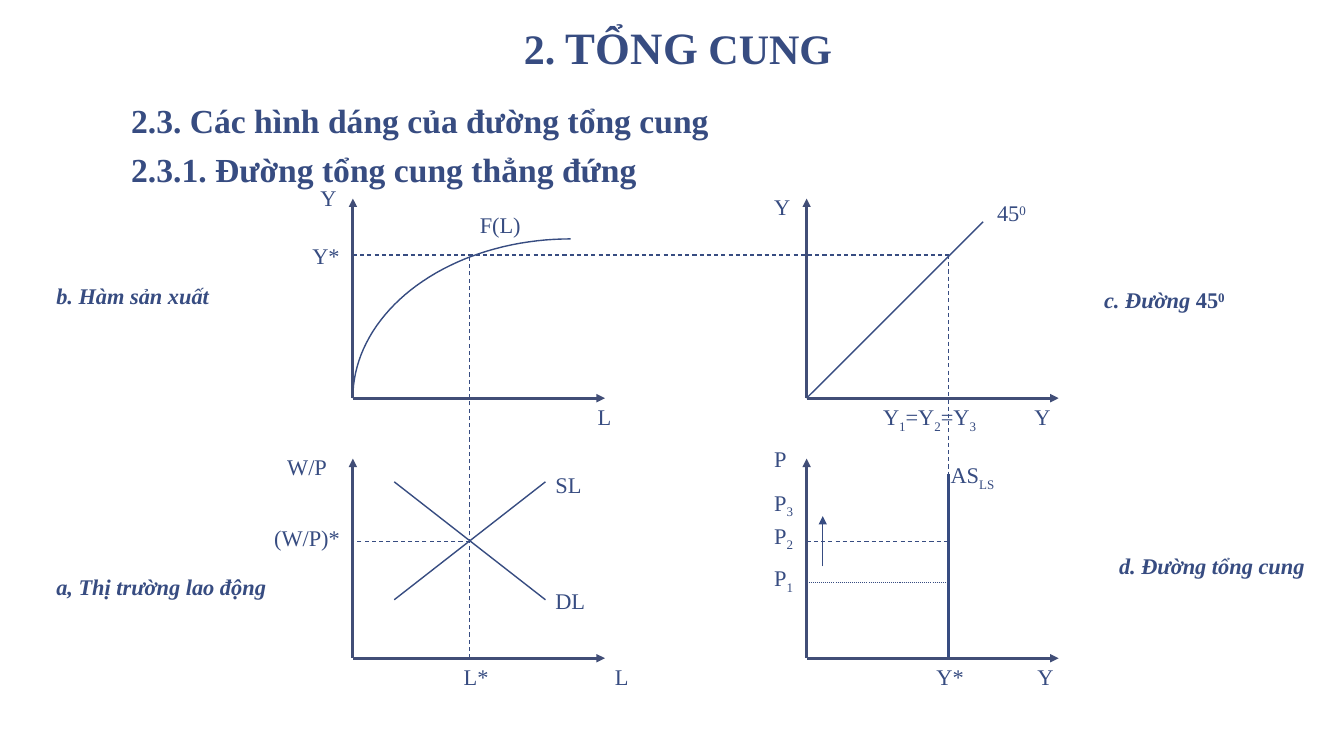
from math import cos, pi, sin

from lxml.etree import SubElement
from pptx import Presentation
from pptx.dml.color import RGBColor
from pptx.enum.dml import MSO_LINE
from pptx.enum.shapes import MSO_CONNECTOR
from pptx.enum.text import MSO_ANCHOR, MSO_AUTO_SIZE, PP_ALIGN
from pptx.oxml.ns import qn
from pptx.util import Inches, Pt

INK = "374C81"
AXIS = "414E77"
SUB, SUPER = -25, 30
LEFT_ORIGIN, RIGHT_ORIGIN = 3.5, 8
TOP_BASE, BOTTOM_BASE = 3.95, 6.53
OUTPUT_LEVEL, WAGE_LEVEL, LOW_PRICE = 2.53, 5.37, 5.78
LABOUR, OUTPUT = 4.66, 9.41
CAPTION = {"bold": True, "italic": True}


def colour(value):
    return RGBColor.from_string(value)


def set_values(target, values):
    for name, value in values.items():
        setattr(target, name, value)


def add_span(para, text, baseline=0, **values):
    span = para.add_run()
    span.text = text
    set_values(span.font, {"name": "Times New Roman", "size": Pt(16), **values})
    span.font.color.rgb = colour(INK)
    if baseline:
        span._r.get_or_add_rPr().set("baseline", str(baseline * 1000))


def add_text(page, left, top, width, height, paragraphs, frame={}, layout={}):
    box = page.shapes.add_textbox(*map(Inches, (left, top, width, height)))
    set_values(box.text_frame, {"word_wrap": True, **frame})
    for index, spans in enumerate(paragraphs):
        para = box.text_frame.paragraphs[0] if index == 0 else box.text_frame.add_paragraph()
        set_values(para, layout)
        if index:
            para.space_before = Pt(6)
        for text, values in spans:
            add_span(para, text, **values)


def add_label(page, left, top, width, text, baseline_texts=(), **values):
    spans = [(text, values)]
    spans += [(part, {**values, "baseline": shift}) for part, shift in baseline_texts]
    add_text(page, left, top, width, 0.37, [spans],
             {"auto_size": MSO_AUTO_SIZE.SHAPE_TO_FIT_TEXT})


def add_line(page, start, end, width=1, dash=None, arrow=False, ink=INK):
    line = page.shapes.add_connector(MSO_CONNECTOR.STRAIGHT, *map(Inches, (*start, *end)))
    set_values(line.line, {"width": Pt(width), "dash_style": dash})
    line.line.color.rgb = colour(ink)
    if arrow:
        SubElement(line.line._get_or_add_ln(), qn("a:tailEnd"), type="triangle")
    SubElement(line._element.spPr, qn("a:effectLst"))


def add_axes(page, left, base):
    for end in ((left, base - 1.98), (left + 2.5, base)):
        add_line(page, (left, base), end, 2, arrow=True, ink=AXIS)


def add_production_curve(page):
    right, width, height, steps = 5.66, 2.16, 1.58, 40
    points = [(Inches(right - width * cos(pi / 2 * step / steps)),
               Inches(TOP_BASE - height * sin(pi / 2 * step / steps)))
              for step in range(steps + 1)]
    builder = page.shapes.build_freeform(*points[0])
    builder.add_line_segments(points[1:], close=False)
    curve = builder.convert_to_shape()
    curve.shadow.inherit = False
    curve.fill.background()
    curve.line.width = Pt(1)
    curve.line.color.rgb = colour(INK)


def add_headings(page):
    insets = {"margin_left": Inches(0.13), "margin_right": Inches(0.13),
              "margin_top": Inches(0.07), "margin_bottom": Inches(0.07)}
    title = [("2. ", 30), ("TỔNG", 32), (" CUNG", 30)]
    add_text(page, 1.17, -0.2, 11.11, 1,
             [[(text, {"size": Pt(size), "bold": True}) for text, size in title]],
             {**insets, "vertical_anchor": MSO_ANCHOR.BOTTOM},
             {"alignment": PP_ALIGN.CENTER, "line_spacing": 0.85})
    headings = ["2.3. Các hình dáng của đường tổng cung", "2.3.1. Đường tổng cung thẳng đứng"]
    add_text(page, 1.17, 0.92, 11.11, 5.91,
             [[(text, {"size": Pt(24), "bold": True})] for text in headings], insets)
    add_text(page, 10.82, 2.79, 2.08, 0.58,
             [[("c. Đường ", CAPTION), ("45", {"bold": True}),
               ("0", {"bold": True, "baseline": SUPER})]],
             insets, {"line_spacing": 0.95})


def add_curves(page):
    add_line(page, (RIGHT_ORIGIN, TOP_BASE), (9.75, 2.2))
    add_line(page, (3.91, 4.78), (5.41, 5.95))
    add_line(page, (5.41, 4.78), (3.91, 5.95))
    add_production_curve(page)
    add_line(page, (OUTPUT, BOTTOM_BASE), (OUTPUT, 4.7), 2.25)
    add_line(page, (8.16, 5.62), (8.16, 5.12), 0.75, arrow=True)


def add_guides(page):
    guides = [
        ((LABOUR, BOTTOM_BASE), (LABOUR, OUTPUT_LEVEL)),
        ((OUTPUT, OUTPUT_LEVEL), (OUTPUT, BOTTOM_BASE)),
        ((LABOUR, WAGE_LEVEL), (LEFT_ORIGIN, WAGE_LEVEL)),
        ((RIGHT_ORIGIN, WAGE_LEVEL), (OUTPUT, WAGE_LEVEL)),
        ((LEFT_ORIGIN, OUTPUT_LEVEL), (OUTPUT, OUTPUT_LEVEL)),
    ]
    for start, end in guides:
        add_line(page, start, end, 0.75, MSO_LINE.DASH)
    add_line(page, (RIGHT_ORIGIN, LOW_PRICE), (OUTPUT, LOW_PRICE), 0.75, MSO_LINE.ROUND_DOT)


def add_labels(page):
    labels = [
        (3.08, 1.78, 0.67, "Y"), (7.58, 1.87, 0.67, "Y"), (3, 2.35, 0.67, "Y*"),
        (4.66, 2.05, 0.92, "F(L)"), (5.83, 3.95, 0.58, "L"), (10.16, 3.95, 0.5, "Y"),
        (2.75, 4.45, 1.08, "W/P"), (2.62, 5.15, 1.08, "(W/P)*"),
        (5.41, 4.62, 0.58, "SL"), (5.41, 5.78, 0.58, "DL"),
        (4.5, 6.53, 0.59, "L*"), (6, 6.53, 0.59, "L"), (7.58, 4.37, 0.5, "P"),
        (9.19, 6.53, 0.67, "Y*"), (10.19, 6.53, 0.67, "Y"),
    ]
    for label in labels:
        add_label(page, *label)
    for number, top in (("3", 4.8), ("2", 5.13), ("1", 5.55)):
        add_label(page, 7.58, top, 0.5, "P", [(number, SUB)])
    add_label(page, 9.33, 4.53, 0.83, "AS", [("LS", SUB)])
    add_label(page, 9.79, 1.93, 0.55, "45", [("0", SUPER)])
    add_label(page, 8.66, 3.95, 1.5, "Y",
              [("1", SUB), ("=Y", 0), ("2", SUB), ("=Y", 0), ("3", SUB)])
    add_label(page, 0.46, 5.64, 3.08, "a, Thị trường lao động", **CAPTION)
    add_label(page, 0.46, 2.75, 2.59, "b. Hàm sản xuất", **CAPTION)
    add_label(page, 11, 5.43, 2.59, "d. Đường tổng cung", **CAPTION)


def main():
    deck = Presentation()
    deck.slide_width, deck.slide_height = Inches(13.33), Inches(7.5)
    page = deck.slides.add_slide(deck.slide_layouts[6])
    add_headings(page)
    add_curves(page)
    add_guides(page)
    for left in (LEFT_ORIGIN, RIGHT_ORIGIN):
        for base in (TOP_BASE, BOTTOM_BASE):
            add_axes(page, left, base)
    add_labels(page)
    deck.save("out.pptx")


if __name__ == "__main__":
    main()
